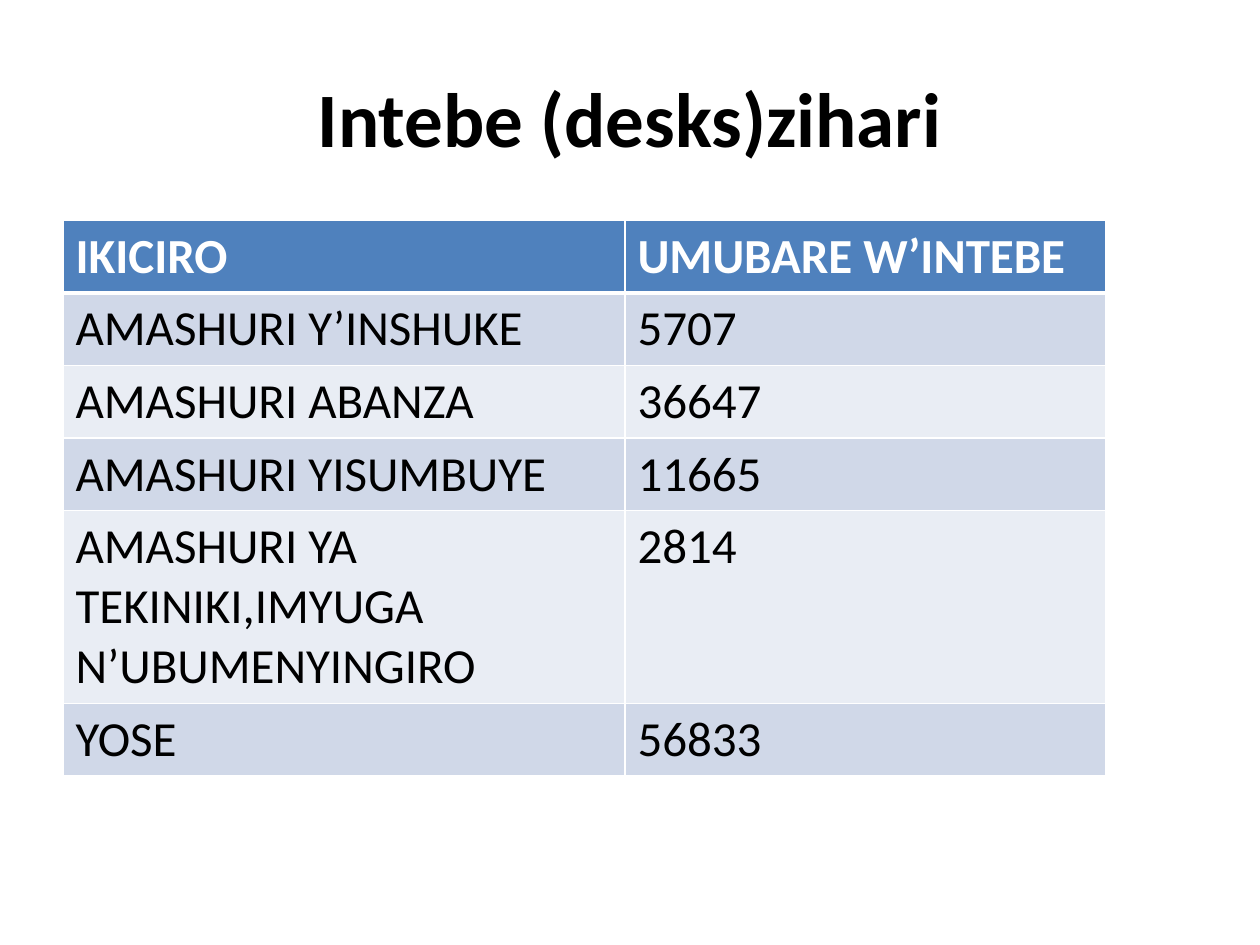
from lxml import etree
from pptx import Presentation
from pptx.dml.color import RGBColor
from pptx.enum import text
from pptx.oxml import ns
from pptx.util import Inches, Pt

WHITE = RGBColor(0xFF, 0xFF, 0xFF)
BLACK = RGBColor(0x00, 0x00, 0x00)
HEADER_BLUE = RGBColor(0x4F, 0x81, 0xBD)
BANDS = (RGBColor(0xE9, 0xED, 0xF4), RGBColor(0xD0, 0xD8, 0xE8))

ROWS = [
    ("IKICIRO", "UMUBARE W’INTEBE"),
    ("AMASHURI Y’INSHUKE", "5707"),
    ("AMASHURI ABANZA", "36647"),
    ("AMASHURI YISUMBUYE", "11665"),
    ("AMASHURI YA TEKINIKI,IMYUGA N’UBUMENYINGIRO", "2814"),
    ("YOSE", "56833"),
]
COLUMN_WIDTHS = (4.46, 3.82)
ROW_HEIGHTS = (0.56, 0.56, 0.56, 0.56, 1.53, 0.56)


def write_text(frame, words, *, size, color=BLACK, bold=False,
               align=text.PP_ALIGN.LEFT, anchor=text.MSO_ANCHOR.TOP):
    frame.word_wrap = True
    frame.vertical_anchor = anchor
    para = frame.paragraphs[0]
    para.alignment = align
    span = para.add_run()
    span.text = words
    span.font.name = "Calibri"
    span.font.size = Pt(size)
    span.font.bold = bold
    span.font.color.rgb = color


def set_borders(cell, widths):
    properties = cell._tc.get_or_add_tcPr()
    for index, (side, width) in enumerate(widths.items()):
        line = etree.Element(ns.qn(f"a:ln{side}"), w=str(Pt(width)))
        fill = etree.SubElement(line, ns.qn("a:solidFill"))
        etree.SubElement(fill, ns.qn("a:srgbClr"), val=str(WHITE))
        properties.insert(index, line)


def place_title(page, left, top, width, height):
    title = page.shapes.title
    title.left, title.top = Inches(left), Inches(top)
    title.width, title.height = Inches(width), Inches(height)
    write_text(title.text_frame, "Intebe (desks)zihari", size=44, bold=True,
               align=text.PP_ALIGN.CENTER, anchor=text.MSO_ANCHOR.MIDDLE)


def place_desk_table(page, left, top, width, height):
    table = page.shapes.add_table(
        len(ROWS), len(COLUMN_WIDTHS),
        Inches(left), Inches(top), Inches(width), Inches(height)).table
    for column, column_width in zip(table.columns, COLUMN_WIDTHS):
        column.width = Inches(column_width)
    for row, row_height in zip(table.rows, ROW_HEIGHTS):
        row.height = Inches(row_height)
    for row_index, values in enumerate(ROWS):
        header = row_index == 0
        for column_index, value in enumerate(values):
            cell = table.cell(row_index, column_index)
            cell.fill.solid()
            cell.fill.fore_color.rgb = HEADER_BLUE if header else BANDS[row_index % 2]
            set_borders(cell, {"L": 1, "R": 1, "T": 3 if row_index == 1 else 1,
                               "B": 3 if header else 1})
            write_text(cell.text_frame, value, size=28, bold=header,
                       color=WHITE if header else BLACK)


def main():
    deck = Presentation()
    deck.slide_width, deck.slide_height = Inches(10), Inches(7.5)
    page = deck.slides.add_slide(deck.slide_layouts[5])
    place_title(page, 0.5, 0.3, 9, 1.25)
    place_desk_table(page, 0.5, 1.75, sum(COLUMN_WIDTHS), sum(ROW_HEIGHTS))
    deck.save("out.pptx")


if __name__ == "__main__":
    main()
